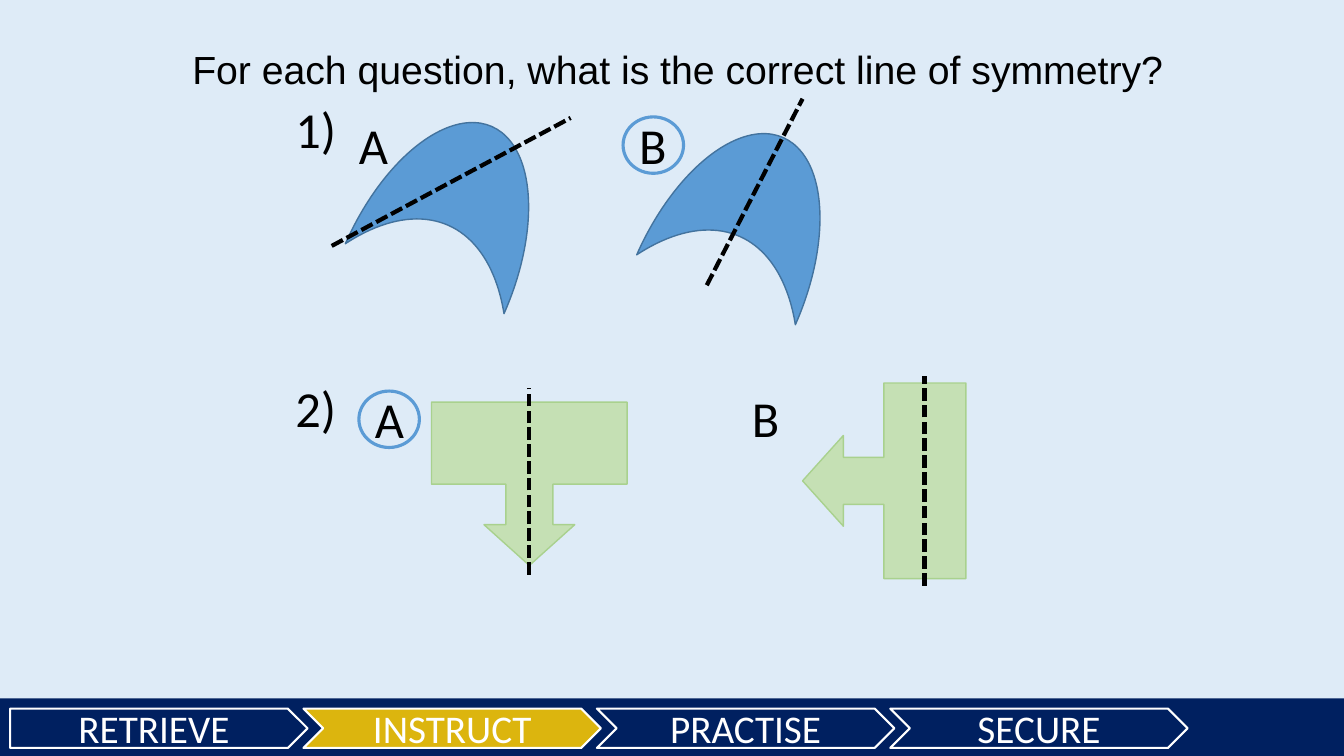
from dataclasses import dataclass

from lxml import etree
from pptx import Presentation
from pptx.dml.color import RGBColor
from pptx.enum.dml import MSO_LINE
from pptx.enum.shapes import MSO_CONNECTOR, MSO_SHAPE
from pptx.enum.text import MSO_ANCHOR, PP_ALIGN
from pptx.oxml.ns import qn
from pptx.util import Inches, Pt

RECTANGLE, OVAL = MSO_SHAPE.RECTANGLE, MSO_SHAPE.OVAL
PENTAGON, CHEVRON = MSO_SHAPE.PENTAGON, MSO_SHAPE.CHEVRON
MOON, CALLOUT = MSO_SHAPE.MOON, MSO_SHAPE.UP_ARROW_CALLOUT
STRAIGHT, DASH = MSO_CONNECTOR.STRAIGHT, MSO_LINE.SQUARE_DOT
LEFT, CENTER = PP_ALIGN.LEFT, PP_ALIGN.CENTER
TOP, MIDDLE = MSO_ANCHOR.TOP, MSO_ANCHOR.MIDDLE


@dataclass(frozen=True)
class Theme:
    background: str = "DEEBF7"
    navy: str = "002060"
    gold: str = "DCB50E"
    white: str = "FFFFFF"
    black: str = "000000"
    blue: str = "5B9BD5"
    blue_edge: str = "43739E"
    green: str = "C5E0B4"
    green_edge: str = "A9D18E"
    heading_font: str = "Arial"
    label_font: str = "Calibri"
    heading_size: int = 28
    label_size: int = 36
    stage_size: int = 28


THEME = Theme()

# Content: positions are columns and rows of a one-inch grid
WIDTH, HEIGHT = 13.33, 7.5
HEADING = "For each question, what is the correct line of symmetry?"
STAGES = ["RETRIEVE", "INSTRUCT", "PRACTISE", "SECURE"]
CURRENT_STAGE = "INSTRUCT"
QUESTIONS = [
    {
        "number": "1)", "top": 0.92,
        "shape": MOON, "size": (1.65, 1.72), "adjust": [0.649],
        "fill": THEME.blue, "edge": THEME.blue_edge,
        "options": [
            {"label": "A", "label_at": (3.46, 1.08), "correct": False,
             "figure_at": (3.72, 1.15), "turn": 113.8,
             "axis": (3.29, 2.44, 5.66, 1.17)},
            {"label": "B", "label_at": (6.24, 1.08), "correct": True,
             "figure_at": (6.61, 1.26), "turn": 113.8,
             "axis": (7.01, 2.83, 7.96, 0.98)},
        ],
    },
    {
        "number": "2)", "top": 3.69,
        "shape": CALLOUT, "size": (1.94, 1.62),
        "adjust": [0.288, 0.278, 0.25, 0.502],
        "fill": THEME.green, "edge": THEME.green_edge,
        "options": [
            {"label": "A", "label_at": (3.62, 3.8), "correct": True,
             "figure_at": (4.28, 3.99), "turn": 180,
             "axis": (5.25, 5.7, 5.25, 3.85)},
            {"label": "B", "label_at": (7.36, 3.79), "correct": False,
             "figure_at": (7.8, 3.96), "turn": 270,
             "axis": (9.17, 5.81, 9.17, 3.73)},
        ],
    },
]

NUMBER_LEFT, NUMBER_WIDTH = 2.83, 0.61
LABEL_WIDTH, LABEL_HEIGHT = 0.48, 0.71
RING_WIDTH, RING_HEIGHT, RING_DROP = 0.6, 0.56, 0.08
BAR_HEIGHT = 0.57
STAGE_LEFT, STAGE_PITCH, STAGE_WIDTH, STAGE_HEIGHT = 0.1, 2.91, 2.95, 0.39


def colour(code):
    return RGBColor.from_string(code)


def write(box, text, size, font=THEME.label_font, ink=THEME.black,
          align=LEFT, anchor=TOP, wrap=False, spacing=None, inset=0.05):
    frame = box.text_frame
    frame.word_wrap = wrap
    frame.vertical_anchor = anchor
    frame.margin_top = frame.margin_bottom = Inches(inset)
    para = frame.paragraphs[0]
    para.alignment = align
    para.line_spacing = spacing
    span = para.add_run()
    span.text = text
    span.font.name, span.font.size = font, Pt(size)
    span.font.color.rgb = colour(ink)


def add_text(page, place, text, size, **style):
    box = page.shapes.add_textbox(*map(Inches, place))
    write(box, text, size, **style)


def add_figure(page, kind, place, fill=None, edge=None, weight=1,
               turn=0, adjust=()):
    figure = page.shapes.add_shape(kind, *map(Inches, place))
    figure.shadow.inherit = False
    figure.rotation = turn
    for index, value in enumerate(adjust):
        figure.adjustments[index] = value
    if fill:
        figure.fill.solid()
        figure.fill.fore_color.rgb = colour(fill)
    else:
        figure.fill.background()
    if edge:
        figure.line.color.rgb = colour(edge)
        figure.line.width = Pt(weight)
    else:
        figure.line.fill.background()
    return figure


def add_axis(page, ends):
    axis = page.shapes.add_connector(STRAIGHT, *map(Inches, ends))
    axis.line.color.rgb = colour(THEME.black)
    axis.line.width = Pt(3)
    axis.line.dash_style = DASH
    etree.SubElement(axis.element.spPr, qn("a:effectLst"))


def add_stages(page):
    bar_top = HEIGHT - BAR_HEIGHT
    add_figure(page, RECTANGLE, (0, bar_top, WIDTH, BAR_HEIGHT), THEME.navy)
    top = bar_top + (BAR_HEIGHT - STAGE_HEIGHT) / 2 + 0.01
    for index, name in enumerate(STAGES):
        place = (STAGE_LEFT + index * STAGE_PITCH, top, STAGE_WIDTH, STAGE_HEIGHT)
        stage = add_figure(
            page, CHEVRON if index else PENTAGON, place,
            THEME.gold if name == CURRENT_STAGE else THEME.navy,
            THEME.white, weight=1.5)
        write(stage, name, THEME.stage_size, ink=THEME.white,
              align=CENTER, anchor=MIDDLE)


def add_question(page, question):
    add_text(page, (NUMBER_LEFT, question["top"], NUMBER_WIDTH, LABEL_HEIGHT),
             question["number"], THEME.label_size)
    for option in question["options"]:
        add_figure(page, question["shape"],
                   (*option["figure_at"], *question["size"]),
                   question["fill"], question["edge"],
                   turn=option["turn"], adjust=question["adjust"])
        left, top = option["label_at"]
        add_text(page, (left, top, LABEL_WIDTH, LABEL_HEIGHT),
                 option["label"], THEME.label_size)
        add_axis(page, option["axis"])
        if option["correct"]:
            ring_left = left + (LABEL_WIDTH - RING_WIDTH) / 2
            add_figure(page, OVAL,
                       (ring_left, top + RING_DROP, RING_WIDTH, RING_HEIGHT),
                       edge=THEME.blue, weight=2.25)


def main():
    deck = Presentation()
    deck.slide_width, deck.slide_height = Inches(WIDTH), Inches(HEIGHT)
    page = deck.slides.add_slide(deck.slide_layouts[6])
    page.background.fill.solid()
    page.background.fill.fore_color.rgb = colour(THEME.background)

    # Lesson stages, then questions, then heading
    add_stages(page)
    for question in QUESTIONS:
        add_question(page, question)
    add_text(page, (0.88, 0.45, 11.68, 3.37), HEADING, THEME.heading_size,
             font=THEME.heading_font, align=CENTER, wrap=True, spacing=0.9)

    deck.save("out.pptx")


if __name__ == "__main__":
    main()
